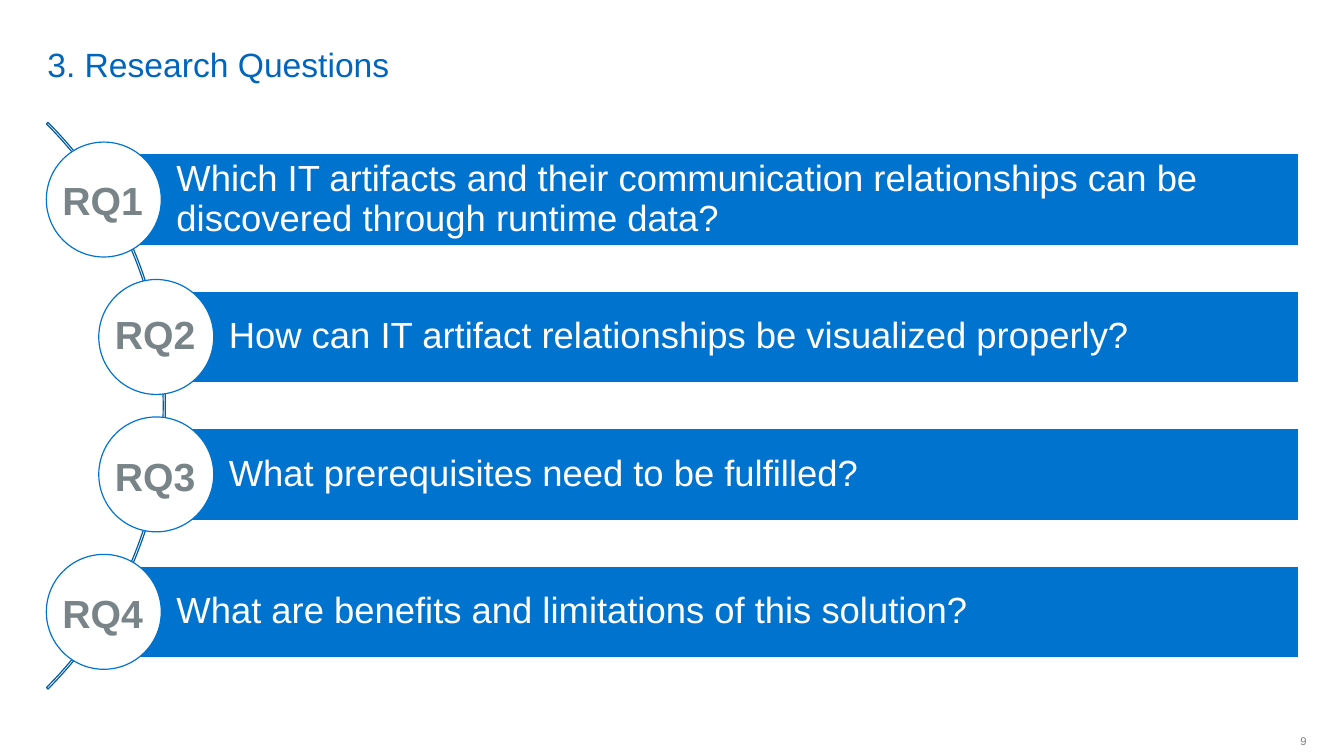
from dataclasses import dataclass

from pptx import Presentation
from pptx.dml.color import RGBColor
from pptx.enum.shapes import MSO_SHAPE
from pptx.enum.text import MSO_ANCHOR, PP_ALIGN
from pptx.util import Inches, Pt


@dataclass(frozen=True)
class Theme:
    """Colours, type sizes and line width of the slide."""
    font: str = "Arial"
    title: str = "0065BD"
    bar: str = "0073CF"
    arc: str = "005CA6"
    label: str = "798488"
    number: str = "808080"
    white: str = "FFFFFF"
    title_size: int = 24
    question_size: int = 26
    label_size: int = 28
    number_size: int = 8
    line_width: float = 0.85


@dataclass(frozen=True)
class Box:
    """A region in inches."""
    left: float
    top: float
    width: float
    height: float

    def lengths(self):
        """Return the four measures as slide lengths."""
        return [Inches(value) for value in (self.left, self.top, self.width, self.height)]


THEME = Theme()
QUESTIONS = [
    ("RQ1", "Which IT artifacts and their communication relationships can be "
            "discovered through runtime data?", 0, 0.29),
    ("RQ2", "How can IT artifact relationships be visualized properly?", 0.52, 0.26),
    ("RQ3", "What prerequisites need to be fulfilled?", 0.52, 0.3),
    ("RQ4", "What are benefits and limitations of this solution?", 0, 0.3),
]


def set_attributes(target, values):
    """Set each named attribute of an object."""
    for name, value in values.items():
        setattr(target, name, value)


def write_text(shape, text, size, color, insets, bold=False, align=PP_ALIGN.LEFT,
               anchor=MSO_ANCHOR.MIDDLE, wrap=True, spacing=1.0):
    """Put one formatted paragraph into a shape."""
    frame = shape.text_frame
    sides = ("margin_left", "margin_top", "margin_right", "margin_bottom")
    set_attributes(frame, dict(zip(sides, map(Inches, insets))))
    set_attributes(frame, {"word_wrap": wrap, "vertical_anchor": anchor})
    para = frame.paragraphs[0]
    set_attributes(para, {"alignment": align, "line_spacing": spacing})
    span = para.add_run()
    span.text = text
    set_attributes(span.font, {"name": THEME.font, "size": Pt(size), "bold": bold})
    span.font.color.rgb = RGBColor.from_string(color)


def draw_shape(page, kind, box, line, fill=None):
    """Add an outlined preset shape, filled if a colour is given."""
    shape = page.shapes.add_shape(kind, *box.lengths())
    shape.shadow.inherit = False
    shape.line.width = Pt(THEME.line_width)
    shape.line.color.rgb = RGBColor.from_string(line)
    if fill:
        shape.fill.solid()
        shape.fill.fore_color.rgb = RGBColor.from_string(fill)
    else:
        shape.fill.background()
    return shape


def draw_title(page, box, text):
    """Place and format the title placeholder."""
    title = page.shapes.title
    set_attributes(title, dict(zip(("left", "top", "width", "height"), box.lengths())))
    write_text(title, text, THEME.title_size, THEME.title, (0.1, 0, 0.1, 0),
               anchor=MSO_ANCHOR.BOTTOM)


def draw_arc(page, box, diameter=7.95):
    """Draw the thin arc that bulges into the box from its left."""
    arc_box = Box(box.left + 1.18 - diameter, box.top + (box.height - diameter) / 2,
                  diameter, diameter)
    arc = draw_shape(page, MSO_SHAPE.BLOCK_ARC, arc_box, THEME.arc)
    for index, value in enumerate((189, 27, 0.0027)):
        arc.adjustments[index] = value


def draw_question(page, box, label, question, label_drop):
    """Draw a bar with its question and the labelled circle at its left end."""
    bar_height = 0.91
    radius = box.height / 2
    bar_box = Box(box.left + radius, box.top + (box.height - bar_height) / 2,
                  box.width - radius, bar_height)
    bar = draw_shape(page, MSO_SHAPE.RECTANGLE, bar_box, THEME.white, THEME.bar)
    write_text(bar, question, THEME.question_size, THEME.white,
               (0.72, 0.07, 0.07, 0.07), spacing=0.9)
    circle_box = Box(box.left, box.top, box.height, box.height)
    draw_shape(page, MSO_SHAPE.OVAL, circle_box, THEME.bar, THEME.white)
    label_box = Box(box.left + 0.06, box.top + label_drop, 1.01, 0.57)
    caption = page.shapes.add_textbox(*label_box.lengths())
    write_text(caption, label, THEME.label_size, THEME.label, (0.1, 0.05, 0.1, 0.05),
               bold=True, anchor=MSO_ANCHOR.TOP, wrap=False)


def draw_questions(page, box, diameter=1.14):
    """Spread the research questions evenly down the box along the arc."""
    draw_arc(page, box)
    pitch = (box.height - diameter) / (len(QUESTIONS) - 1)
    for index, (label, question, indent, label_drop) in enumerate(QUESTIONS):
        row = Box(box.left + indent, box.top + index * pitch, box.width - indent, diameter)
        draw_question(page, row, label, question, label_drop)


def draw_page_number(page, box, number):
    """Write the page number at the right of the box."""
    holder = page.shapes.add_textbox(*box.lengths())
    write_text(holder, number, THEME.number_size, THEME.number, (0.1, 0.05, 0, 0.05),
               align=PP_ALIGN.RIGHT)


def main():
    """Build the slide and save the deck."""
    deck = Presentation()
    set_attributes(deck, {"slide_width": Inches(13.33), "slide_height": Inches(7.5)})
    page = deck.slides.add_slide(deck.slide_layouts.get_by_name("Title Only"))
    draw_title(page, Box(0.37, 0.05, 11.58, 0.79), "3. Research Questions")
    draw_page_number(page, Box(12.6, 7.19, 0.36, 0.32), "9")
    draw_questions(page, Box(0.46, 1.41, 12.42, 5.23))
    deck.save("out.pptx")


if __name__ == "__main__":
    main()
